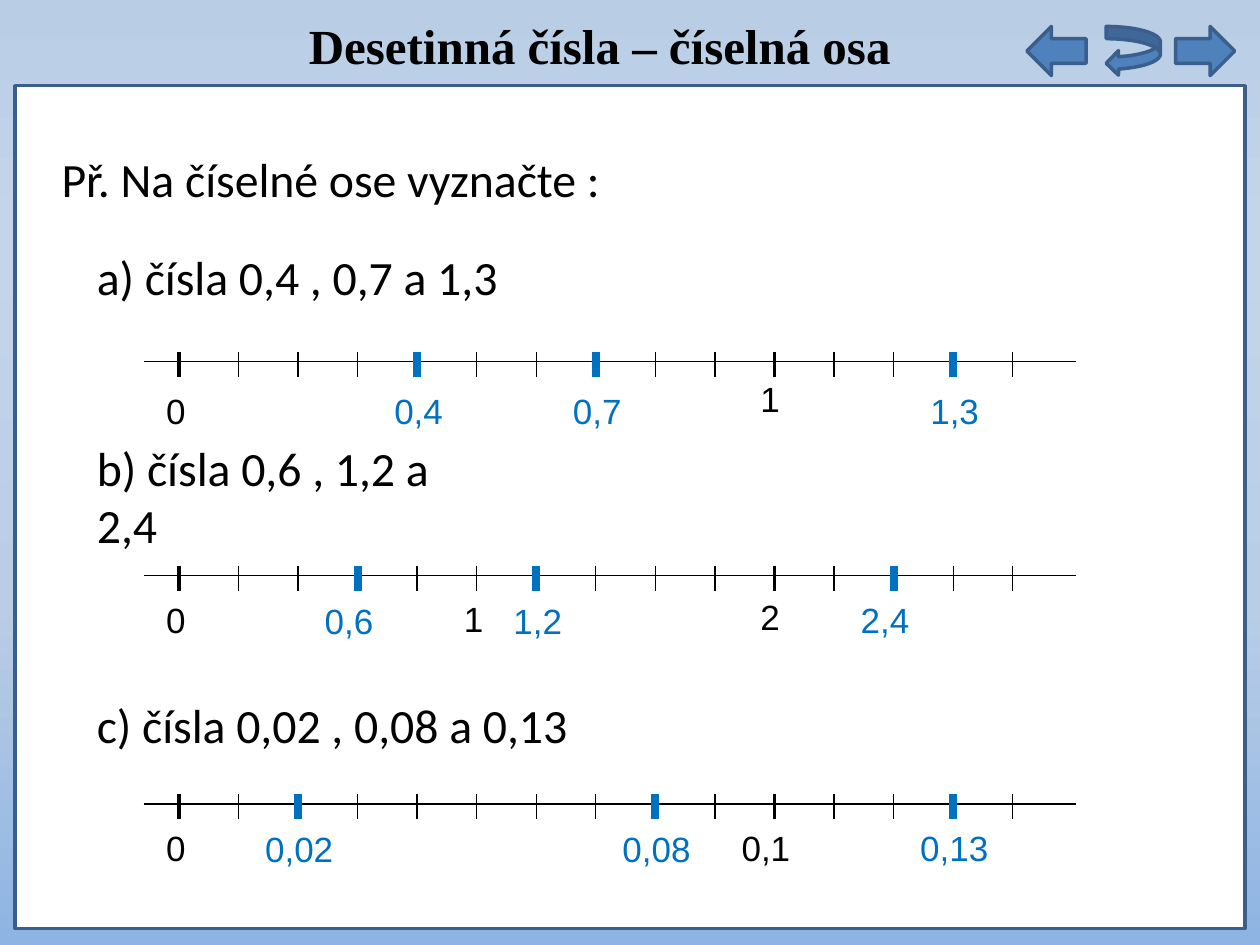
import pptx
import pptx.util
import pptx.dml.color
import pptx.enum.shapes
import pptx.enum.text
import pptx.oxml
import pptx.oxml.ns
import lxml.etree

Inches, Pt = pptx.util.Inches, pptx.util.Pt
RGB = pptx.dml.color.RGBColor.from_string
SHAPES = pptx.enum.shapes.MSO_SHAPE
MIDDLE = pptx.enum.text.MSO_ANCHOR.MIDDLE
TOP = pptx.enum.text.MSO_ANCHOR.TOP
qn = pptx.oxml.ns.qn

THEME = {
    "ink": "000000", "answer": "0070C0", "paper": "FFFFFF",
    "button": "4F81BD", "border": "3A5F8C",
    "sky": [(0, "B9CDE5"), (25, "C5D5E9"), (64, "B9CDE5"), (100, "8EB4E3")],
    "title": ("Times New Roman", 28), "task": ("Calibri", 27.3),
    "number": ("Arial", 20),
    "thin": 0.75, "whole": 2.25, "mark": 4.5, "frame": 2,
}

ORIGIN, STEP, TICKS = 1.42, 0.4727, 15
AXIS_START, AXIS_END = 1.14, 8.54
TICK_UP, TICK_DOWN = 0.08, 0.12

deck = pptx.Presentation()
deck.slide_width, deck.slide_height = Inches(10), Inches(7.5)
slide = deck.slides.add_slide(deck.slide_layouts[5])

sky = slide.background.fill
sky.gradient()
sky.gradient_angle = 270
stops = slide.element.find(".//" + qn("a:gsLst"))
for stop in list(stops):
    stops.remove(stop)
for percent, color in THEME["sky"]:
    stop = lxml.etree.SubElement(stops, qn("a:gs"), pos=str(percent * 1000))
    lxml.etree.SubElement(stop, qn("a:srgbClr"), val=color)


def write(box, words, style, color="ink", anchor=TOP):
    frame = box.text_frame
    frame.text = words
    frame.word_wrap = True
    frame.vertical_anchor = anchor
    font = frame.paragraphs[0].runs[0].font
    font.name, font.size = THEME[style][0], Pt(THEME[style][1])
    font.color.rgb = RGB(THEME[color])
    return frame.paragraphs[0]


def draw_line(x1, y1, x2, y2, weight, color="ink"):
    line = slide.shapes.add_connector(
        pptx.enum.shapes.MSO_CONNECTOR.STRAIGHT,
        Inches(x1), Inches(y1), Inches(x2), Inches(y2))
    line.line.width = Pt(THEME[weight])
    line.line.color.rgb = RGB(THEME[color])
    lxml.etree.SubElement(line.element.spPr, qn("a:effectLst"))


frames = [
    (SHAPES.RECTANGLE, 0.12, 0.68, 9.76, 6.69, "paper", False),
    (SHAPES.RIGHT_ARROW, 9.33, 0.21, 0.47, 0.39, "button", False),
    (SHAPES.RIGHT_ARROW, 8.15, 0.21, 0.47, 0.39, "button", True),
    (SHAPES.CURVED_LEFT_ARROW, 8.78, 0.21, 0.43, 0.39, "button", False),
]
for kind, left, top, width, height, color, mirrored in frames:
    piece = slide.shapes.add_shape(
        kind, Inches(left), Inches(top), Inches(width), Inches(height))
    piece.shadow.inherit = False
    piece.fill.solid()
    piece.fill.fore_color.rgb = RGB(THEME[color])
    piece.line.color.rgb = RGB(THEME["border"])
    piece.line.width = Pt(THEME["frame"])
    if mirrored:
        piece.element.spPr.find(qn("a:xfrm")).set("flipH", "1")

title = slide.shapes.title
title.left, title.top = Inches(0.5), Inches(-0.03)
title.width, title.height = Inches(8.52), Inches(0.77)
heading = write(title, "Desetinná čísla – číselná osa", "title", anchor=MIDDLE)
heading.alignment = pptx.enum.text.PP_ALIGN.CENTER
heading.runs[0].font.bold = True
slide.shapes[1].element.addnext(title.element)

tasks = [
    ("Př. Na číselné ose vyznačte :", 0.39, 1.14, 7.17),
    ("a) čísla 0,4 , 0,7 a 1,3", 0.67, 1.92, 4.33),
    ("b) čísla 0,6 , 1,2 a 2,4", 0.67, 3.66, 3.39),
    ("c) čísla 0,02 , 0,08 a 0,13", 0.67, 5.47, 4.33),
]
for words, left, top, width in tasks:
    task = slide.shapes.add_textbox(
        Inches(left), Inches(top), Inches(width), Inches(0.55))
    write(task, words, "task", anchor=MIDDLE)

# Each number: text, tick, shift left of the tick, drop below the axis, color
axes = [
    (2.87, [("0", 0, 0.2, 0.17, "ink"), ("1", 10, 0.21, 0.08, "ink"),
            ("0,4", 4, 0.28, 0.17, "answer"), ("0,7", 7, 0.28, 0.17, "answer"),
            ("1,3", 13, 0.28, 0.17, "answer")]),
    (4.57, [("0", 0, 0.2, 0.13, "ink"), ("1", 5, 0.2, 0.12, "ink"),
            ("2", 10, 0.21, 0.11, "ink"), ("0,6", 3, 0.36, 0.14, "answer"),
            ("1,2", 6, 0.28, 0.14, "answer"), ("2,4", 12, 0.36, 0.13, "answer")]),
    (6.38, [("0", 0, 0.2, 0.13, "ink"), ("0,1", 10, 0.36, 0.13, "ink"),
            ("0,02", 2, 0.36, 0.14, "answer"), ("0,08", 8, 0.36, 0.14, "answer"),
            ("0,13", 13, 0.36, 0.13, "answer")]),
]
label_widths = {1: 0.47, 3: 0.71, 4: 0.79}

for axis, numbers in axes:
    draw_line(AXIS_START, axis, AXIS_END, axis, "thin")
    for tick in range(TICKS):
        x = ORIGIN + tick * STEP
        weight = "whole" if tick in (0, 10) else "thin"
        draw_line(x, axis - TICK_UP, x, axis + TICK_DOWN, weight)
    for words, tick, shift, drop, color in numbers:
        x = ORIGIN + tick * STEP
        if color == "answer":
            draw_line(x, axis - TICK_UP, x, axis + TICK_DOWN, "mark", color)
        number = slide.shapes.add_textbox(
            Inches(x - shift), Inches(axis + drop),
            Inches(label_widths[len(words)]), Inches(0.47))
        write(number, words, "number", color).space_before = Pt(2)

deck.save("out.pptx")
